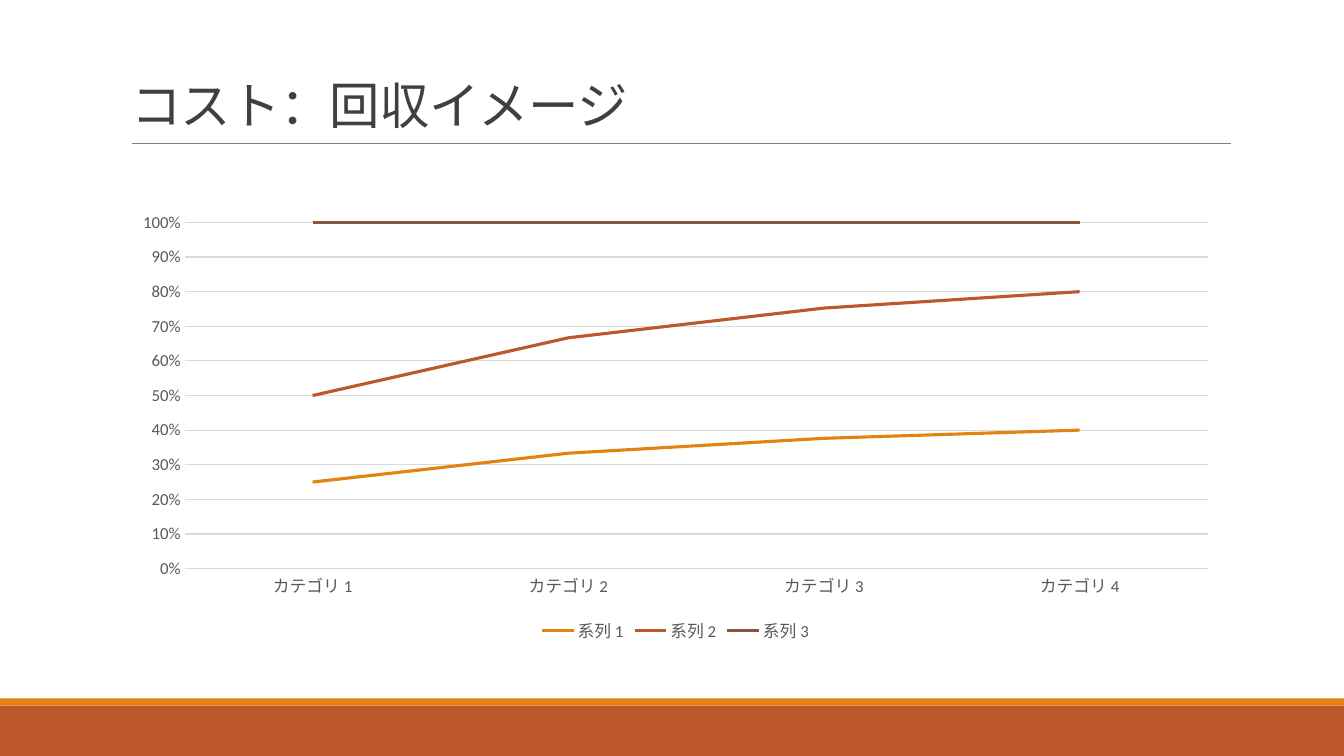
import pptx
import pptx.chart.data
import pptx.dml.color
import pptx.enum.chart
import pptx.enum.shapes
import pptx.enum.text
import pptx.util
from lxml import etree
from pptx.oxml.ns import qn
from pptx.util import Cm, Pt

WIDTH, HEIGHT = 33.87, 19.05
ORANGE, RUST, BROWN = "E48312", "BD582C", "865640"
DARK, GREY, RULE, GRID = "404040", "595959", "808080", "D9D9D9"


def color(value):
    return pptx.dml.color.RGBColor.from_string(value)


def apply(target, values):
    for name, value in values.items():
        setattr(target, name, value)


class SlideBuilder:
    title_font = "Noto Sans CJK JP"
    chart_font = "Calibri"

    def __init__(self, deck):
        self.page = deck.slides.add_slide(deck.slide_layouts[5])

    def band(self, top, height, fill):
        box = self.page.shapes.add_shape(
            pptx.enum.shapes.MSO_SHAPE.RECTANGLE,
            Cm(0), Cm(top), Cm(WIDTH), Cm(height))
        box.shadow.inherit = False
        box.fill.solid()
        box.fill.fore_color.rgb = color(fill)
        box.line.fill.background()

    def stroke(self, line, value, width):
        line.color.rgb = color(value)
        line.width = Pt(width)

    def rule(self, left, right, top):
        line = self.page.shapes.add_connector(
            pptx.enum.shapes.MSO_CONNECTOR.STRAIGHT,
            Cm(left), Cm(top), Cm(right), Cm(top))
        self.stroke(line.line, RULE, 0.5)
        etree.SubElement(line._element.spPr, qn("a:effectLst"))

    def title(self, text, left, top, width, height):
        box = self.page.shapes.title
        apply(box, {"left": Cm(left), "top": Cm(top),
                    "width": Cm(width), "height": Cm(height)})
        apply(box.text_frame, {
            "text": text, "word_wrap": True,
            "auto_size": pptx.enum.text.MSO_AUTO_SIZE.NONE,
            "vertical_anchor": pptx.enum.text.MSO_ANCHOR.BOTTOM})
        para = box.text_frame.paragraphs[0]
        apply(para, {"alignment": pptx.enum.text.PP_ALIGN.LEFT,
                     "line_spacing": 0.85})
        span = para.runs[0]
        apply(span.font, {"name": self.title_font, "size": Pt(36)})
        span.font.color.rgb = color(DARK)
        # East Asian typeface and letter spacing
        properties = span.font._element
        properties.set("spc", "-50")
        east_asian = etree.SubElement(properties, qn("a:ea"))
        east_asian.set("typeface", self.title_font)

    def chart_text(self, font):
        apply(font, {"name": self.chart_font, "size": Pt(12), "bold": False})
        font.color.rgb = color(GREY)

    def line_chart(self, categories, series, left, top, width, height):
        data = pptx.chart.data.CategoryChartData()
        data.categories = categories
        for name, values, _ in series:
            data.add_series(name, values)
        chart = self.page.shapes.add_chart(
            pptx.enum.chart.XL_CHART_TYPE.LINE_STACKED_100,
            Cm(left), Cm(top), Cm(width), Cm(height), data).chart
        chart.has_title = False
        self.chart_text(chart.font)

        # Series lines
        chart.plots[0].vary_by_categories = False
        for line, (_, _, value) in zip(chart.plots[0].series, series):
            line.smooth = False
            line.marker.style = pptx.enum.chart.XL_MARKER_STYLE.NONE
            self.stroke(line.format.line, value, 2.25)

        # Axes and gridlines
        no_tick = pptx.enum.chart.XL_TICK_MARK.NONE
        for axis in (chart.category_axis, chart.value_axis):
            apply(axis, {"major_tick_mark": no_tick,
                         "minor_tick_mark": no_tick})
            self.chart_text(axis.tick_labels.font)
        self.stroke(chart.category_axis.format.line, GRID, 0.75)
        apply(chart.value_axis, {"has_major_gridlines": True,
                                 "minimum_scale": 0, "maximum_scale": 1,
                                 "major_unit": 0.1})
        apply(chart.value_axis.tick_labels, {
            "number_format": "0%", "number_format_is_linked": False})
        chart.value_axis.format.line.fill.background()
        self.stroke(chart.value_axis.major_gridlines.format.line, GRID, 0.75)

        # Legend
        chart.has_legend = True
        apply(chart.legend, {
            "position": pptx.enum.chart.XL_LEGEND_POSITION.BOTTOM,
            "include_in_layout": False})
        self.chart_text(chart.legend.font)


def main():
    deck = pptx.Presentation()
    apply(deck, {"slide_width": Cm(WIDTH), "slide_height": Cm(HEIGHT)})
    slide = SlideBuilder(deck)

    # Footer bands and title rule
    slide.band(17.78, 1.27, RUST)
    slide.band(17.6, 0.18, ORANGE)
    slide.rule(3.33, 31.01, 3.61)

    # Title
    slide.title("コスト：回収イメージ", 3.05, 0.79, 27.94, 2.74)

    # Cost recovery chart
    categories = [f"カテゴリ {number}" for number in range(1, 5)]
    series = [("系列 1", (25, 33, 38, 40), ORANGE),
              ("系列 2", (25, 33, 38, 40), RUST),
              ("系列 3", (50, 33, 25, 20), BROWN)]
    slide.line_chart(categories, series, 3.05, 5.13, 27.94, 11.18)

    deck.save("out.pptx")


if __name__ == "__main__":
    main()
